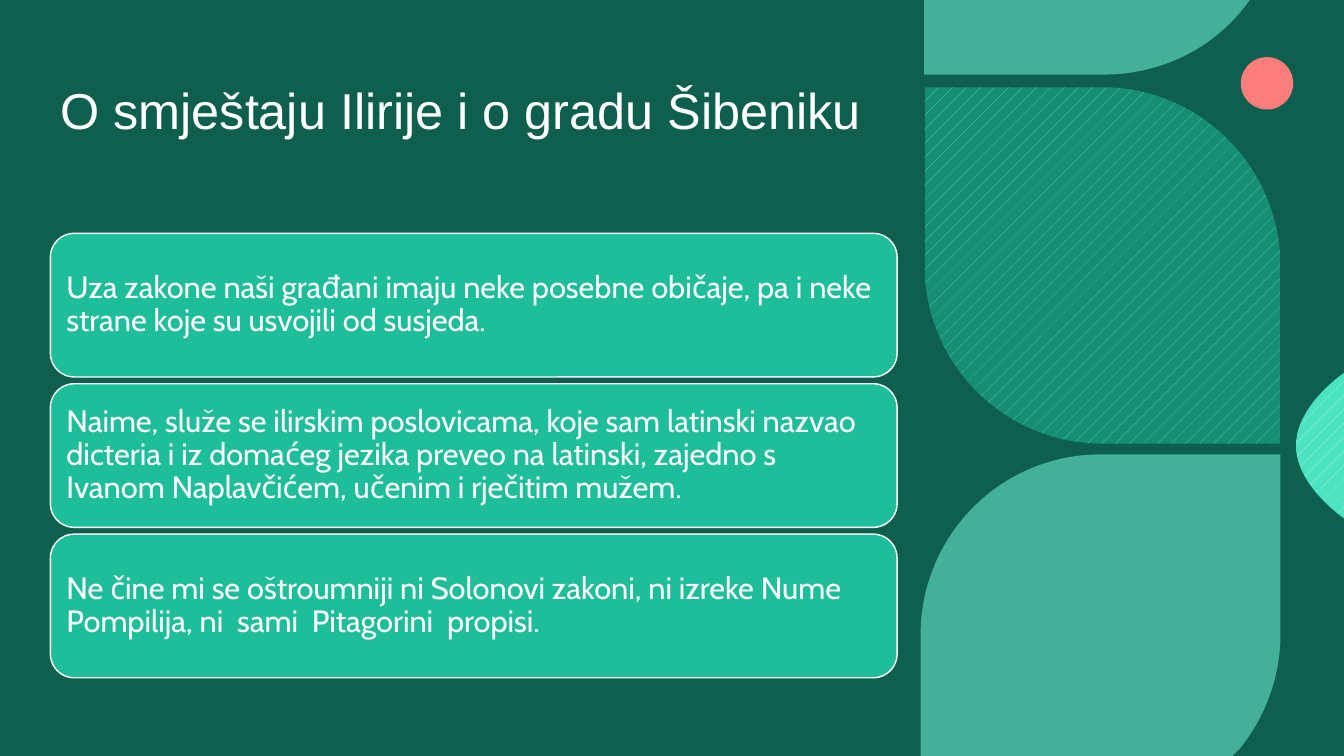
"""Build a slide on Illyria and the city of Šibenik."""
from dataclasses import dataclass

from lxml import etree
from pptx import Presentation
from pptx.dml.color import RGBColor
from pptx.enum.dml import MSO_PATTERN
from pptx.enum.shapes import MSO_SHAPE
from pptx.enum.text import MSO_ANCHOR, MSO_AUTO_SIZE, PP_ALIGN
from pptx.oxml.ns import qn
from pptx.util import Cm, Pt

DOTS = MSO_PATTERN.PERCENT_5
RECT, ROUND, OVAL = MSO_SHAPE.RECTANGLE, MSO_SHAPE.ROUNDED_RECTANGLE, MSO_SHAPE.OVAL
MIDDLE, BOTTOM = MSO_ANCHOR.MIDDLE, MSO_ANCHOR.BOTTOM
LEFT, NO_FIT = PP_ALIGN.LEFT, MSO_AUTO_SIZE.NONE


@dataclass(frozen=True)
class Theme:
    back: str = "09392F"
    veil: str = "18997E"
    card: str = "1EBE9B"
    text: str = "FFFFFF"
    dot: str = "FD7C7C"
    leaf: str = "69E7CC"
    mint: str = "4BE3C2"
    pale: str = "C3F6EB"
    deep: str = "178E74"
    head_font: str = "Arial"
    body_font: str = "Cabin"
    head_size: int = 36
    body_size: int = 22


THEME = Theme()
WIDTH, HEIGHT = 33.87, 19.05
TITLE = "O smještaju Ilirije i o gradu Šibeniku"
CARDS = [
    "Uza zakone naši građani imaju neke posebne običaje, pa i neke strane koje su usvojili od susjeda.",
    "Naime, služe se ilirskim poslovicama, koje sam latinski nazvao dicteria i iz domaćeg jezika "
    "preveo na latinski, zajedno s Ivanom Naplavčićem, učenim i rječitim mužem.",
    "Ne čine mi se oštroumniji ni Solonovi zakoni, ni izreke Nume Pompilija, "
    "ni  sami  Pitagorini  propisi.",
]
LEAVES = [
    ([(23.29, 0), (31.5, 0), (31.32, 0.23), (30.51, 1.24, 29.24, 1.88, 27.81, 1.88),
      (23.29, 1.88)], dict(color=THEME.leaf, alpha=60)),
    ([(27.74, 11.45), (32.27, 11.45), (32.27, 15.98),
      (32.27, 17.07, 31.88, 18.08, 31.24, 18.87), (31.06, 19.05), (23.2, 19.05),
      (23.2, 16), (23.2, 13.49, 25.22, 11.45, 27.74, 11.45)],
     dict(color=THEME.leaf, alpha=60)),
    ([(33.87, 9.4), (33.87, 13.06), (33.87, 13.06, 32.66, 12.24, 32.66, 11.23),
      (32.66, 10.21, 33.87, 9.4, 33.87, 9.4)], dict(color=THEME.pale, under=THEME.mint)),
    ([(32.27, 11.18), (27.79, 11.18), (25.3, 11.18, 23.3, 9.17, 23.3, 6.68),
      (23.3, 2.2), (27.79, 2.2), (30.25, 2.2, 32.27, 4.22, 32.27, 6.71)],
     dict(color=THEME.mint, under=THEME.deep)),
]


def rgb(code):
    return RGBColor.from_string(code)


def paint(shape, color, alpha=None, under=None, edge=None):
    shape.shadow.inherit = False
    fill = shape.fill
    if under:
        fill.patterned()
        fill.pattern = DOTS
        fill.back_color.rgb = rgb(under)
    else:
        fill.solid()
    fill.fore_color.rgb = rgb(color)
    if alpha:
        tint = shape._element.spPr.find(".//" + qn("a:srgbClr"))
        etree.SubElement(tint, qn("a:alpha")).set("val", str(alpha * 1000))
    if edge:
        shape.line.color.rgb = rgb(edge)
        shape.line.width = Pt(1)
    else:
        shape.line.fill.background()


def add(kind, box, **look):
    shape = slide.shapes.add_shape(kind, *map(Cm, box))
    paint(shape, **look)
    return shape


def trace(steps):
    spots = [(Cm(s[k]), Cm(s[k + 1])) for s in steps for k in range(0, len(s), 2)]
    pen = slide.shapes.build_freeform(*spots[0])
    pen.add_line_segments(spots[1:])
    shape = pen.convert_to_shape()
    lines = iter(shape._element.spPr.findall(".//" + qn("a:lnTo")))
    for step in steps[1:]:
        line = next(lines)
        if len(step) == 6:
            curve = etree.Element(qn("a:cubicBezTo"))
            line.addprevious(curve)
            for part in (line, next(lines), next(lines)):
                curve.append(part[0])
                part.getparent().remove(part)
    return shape


def write(shape, text, font, size, anchor, pads):
    frame = shape.text_frame
    frame.word_wrap = True
    frame.auto_size = NO_FIT
    frame.vertical_anchor = anchor
    frame.margin_left = frame.margin_right = Cm(pads[0])
    frame.margin_top, frame.margin_bottom = Cm(pads[1]), Cm(pads[2])
    frame.text = text
    para = frame.paragraphs[0]
    para.alignment = LEFT
    para.line_spacing = 0.9
    para.space_before = Pt(0)
    para.font.name, para.font.size = font, Pt(size)
    para.font.color.rgb = rgb(THEME.text)


deck = Presentation()
deck.slide_width, deck.slide_height = Cm(WIDTH), Cm(HEIGHT)
slide = deck.slides.add_slide(deck.slide_layouts[5])
ground = slide.background.fill
ground.solid()
ground.fore_color.rgb = rgb(THEME.back)

add(RECT, (0, 0, WIDTH, HEIGHT), color=THEME.veil, alpha=40)
add(OVAL, (31.27, 1.44, 1.32, 1.32), color=THEME.dot)
for steps, look in LEAVES:
    paint(trace(steps), **look)

title = slide.shapes.title
title.left, title.top, title.width, title.height = map(Cm, (1.27, 1.85, 21.34, 3.68))
write(title, TITLE, font=THEME.head_font, size=THEME.head_size,
      anchor=BOTTOM, pads=(0.25, 0.13, 1.98))
slide.shapes._spTree.append(title._element)

TOP, TALL, PITCH = 5.88, 3.62, 3.79
for i, text in enumerate(CARDS):
    card = add(ROUND, (1.27, TOP + i * PITCH, 21.34, TALL), color=THEME.card, edge=THEME.text)
    write(card, text, font=THEME.body_font, size=THEME.body_size,
          anchor=MIDDLE, pads=(0.23, 0.23, 0.23))

deck.save("out.pptx")
